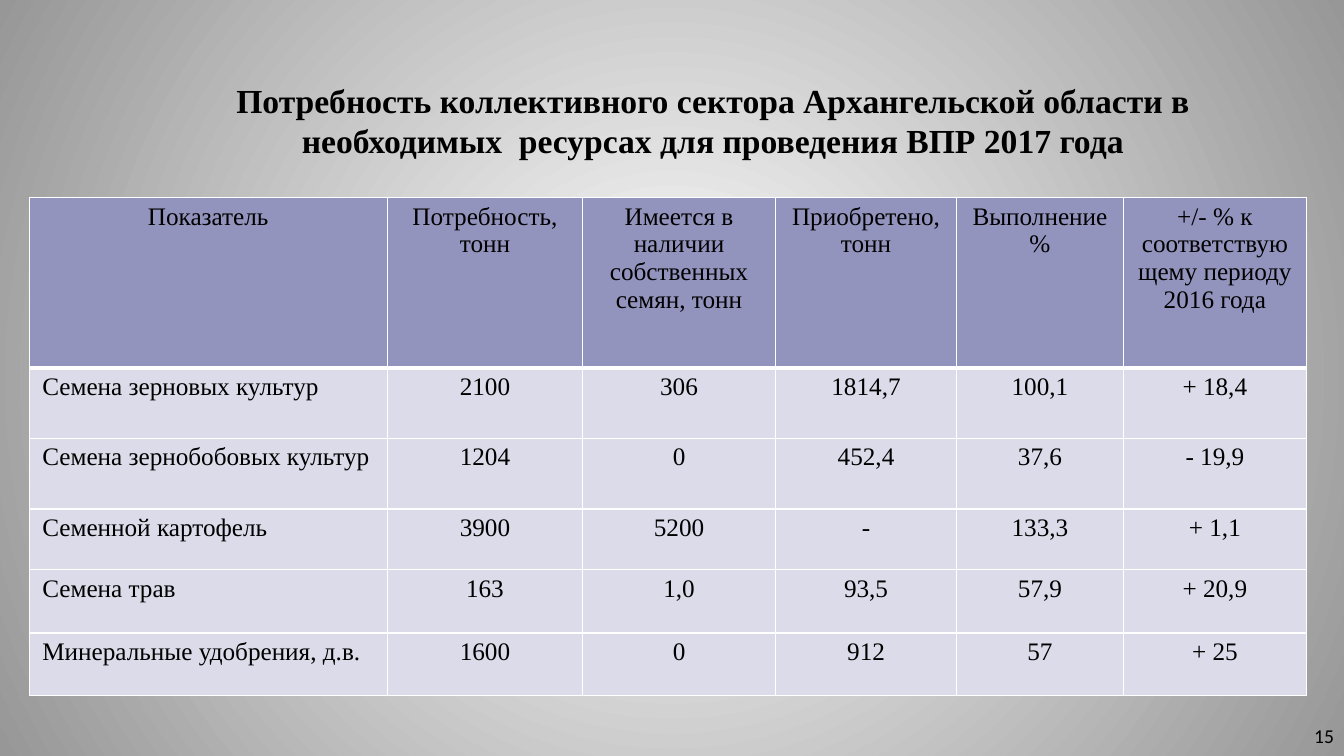
from lxml.etree import SubElement
from pptx import Presentation
from pptx.dml.color import RGBColor
from pptx.enum.text import MSO_ANCHOR, PP_ALIGN
from pptx.oxml.ns import qn
from pptx.util import Inches, Pt

BLACK = RGBColor(0x00, 0x00, 0x00)
WHITE = RGBColor(0xFF, 0xFF, 0xFF)
GREY = RGBColor(0x97, 0x97, 0x97)
HEADER = RGBColor(0x93, 0x94, 0xBE)
BODY = RGBColor(0xDB, 0xDB, 0xE9)


def add_text(p, text, size, align, font="Times New Roman", bold=False):
    p.alignment = align
    r = p.add_run()
    r.text = text
    r.font.size = Pt(size)
    r.font.name = font
    r.font.bold = bold
    r.font.color.rgb = BLACK


def add_border(cell, side, width):
    ln = SubElement(cell._tc.get_or_add_tcPr(), qn(f"a:ln{side}"), w=str(Pt(width)))
    fill = SubElement(ln, qn("a:solidFill"))
    SubElement(fill, qn("a:srgbClr"), val=str(WHITE))


prs = Presentation()
prs.slide_width = Inches(13.33)
prs.slide_height = Inches(7.5)
s = prs.slides.add_slide(prs.slide_layouts[6])

bg = s.background.fill
bg.gradient()
for stop, color, position in zip(bg.gradient_stops, (WHITE, GREY), (0, 1)):
    stop.color.rgb = color
    stop.position = position
grad = s._element.find(f".//{qn('a:gradFill')}")
grad.remove(grad.find(qn("a:lin")))
path = SubElement(grad, qn("a:path"), path="circle")
SubElement(path, qn("a:fillToRect"), l="50000", t="50000", r="50000", b="50000")

number = s.shapes.add_textbox(Inches(10.22), Inches(7.1), Inches(3.11), Inches(0.4))
tf = number.text_frame
tf.word_wrap = True
tf.vertical_anchor = MSO_ANCHOR.MIDDLE
add_text(tf.paragraphs[0], "15", 14, PP_ALIGN.RIGHT, font="Calibri")

title = s.shapes.add_textbox(Inches(2.1), Inches(0.74), Inches(9.94), Inches(0.91))
tf = title.text_frame
tf.word_wrap = True
add_text(
    tf.paragraphs[0],
    "Потребность коллективного сектора Архангельской области в "
    "необходимых  ресурсах для проведения ВПР 2017 года",
    24, PP_ALIGN.CENTER, bold=True,
)

rows = [
    ["Показатель", "Потребность, тонн", "Имеется в наличии собственных семян, тонн",
     "Приобретено,\nтонн", "Выполнение\n%", "+/- % к соответствующему периоду 2016 года"],
    ["Семена зерновых культур", "2100", "306", "1814,7", "100,1", "+ 18,4"],
    ["Семена зернобобовых культур", "1204", "0", "452,4", "37,6", "- 19,9"],
    ["Семенной картофель", "3900", "5200", "-", "133,3", "+ 1,1"],
    ["Семена трав", "163", "1,0", "93,5", "57,9", "+ 20,9"],
    ["Минеральные удобрения, д.в.", "1600", "0", "912", "57", "+ 25"],
]
widths = [3.55, 1.94, 1.91, 1.8, 1.65, 1.82]
heights = [1.69, 0.7, 0.7, 0.6, 0.63, 0.62]

table = s.shapes.add_table(
    len(rows), len(widths), Inches(0.29), Inches(1.96), Inches(12.67), Inches(4.94)
).table
for column, width in zip(table.columns, widths):
    column.width = Inches(width)
for row, height in zip(table.rows, heights):
    row.height = Inches(height)

for i, row in enumerate(rows):
    for j, text in enumerate(row):
        cell = table.cell(i, j)
        cell.margin_left = cell.margin_right = Inches(0.13)
        cell.margin_top = cell.margin_bottom = Inches(0.05)
        add_border(cell, "L", 1)
        add_border(cell, "R", 1)
        add_border(cell, "T", 3 if i == 1 else 1)
        add_border(cell, "B", 3 if i == 0 else 1)
        cell.fill.solid()
        cell.fill.fore_color.rgb = HEADER if i == 0 else BODY
        align = PP_ALIGN.LEFT if i > 0 and j == 0 else PP_ALIGN.CENTER
        tf = cell.text_frame
        for k, line in enumerate(text.split("\n")):
            p = tf.add_paragraph() if k else tf.paragraphs[0]
            add_text(p, line, 18, align)

prs.save("out.pptx")
